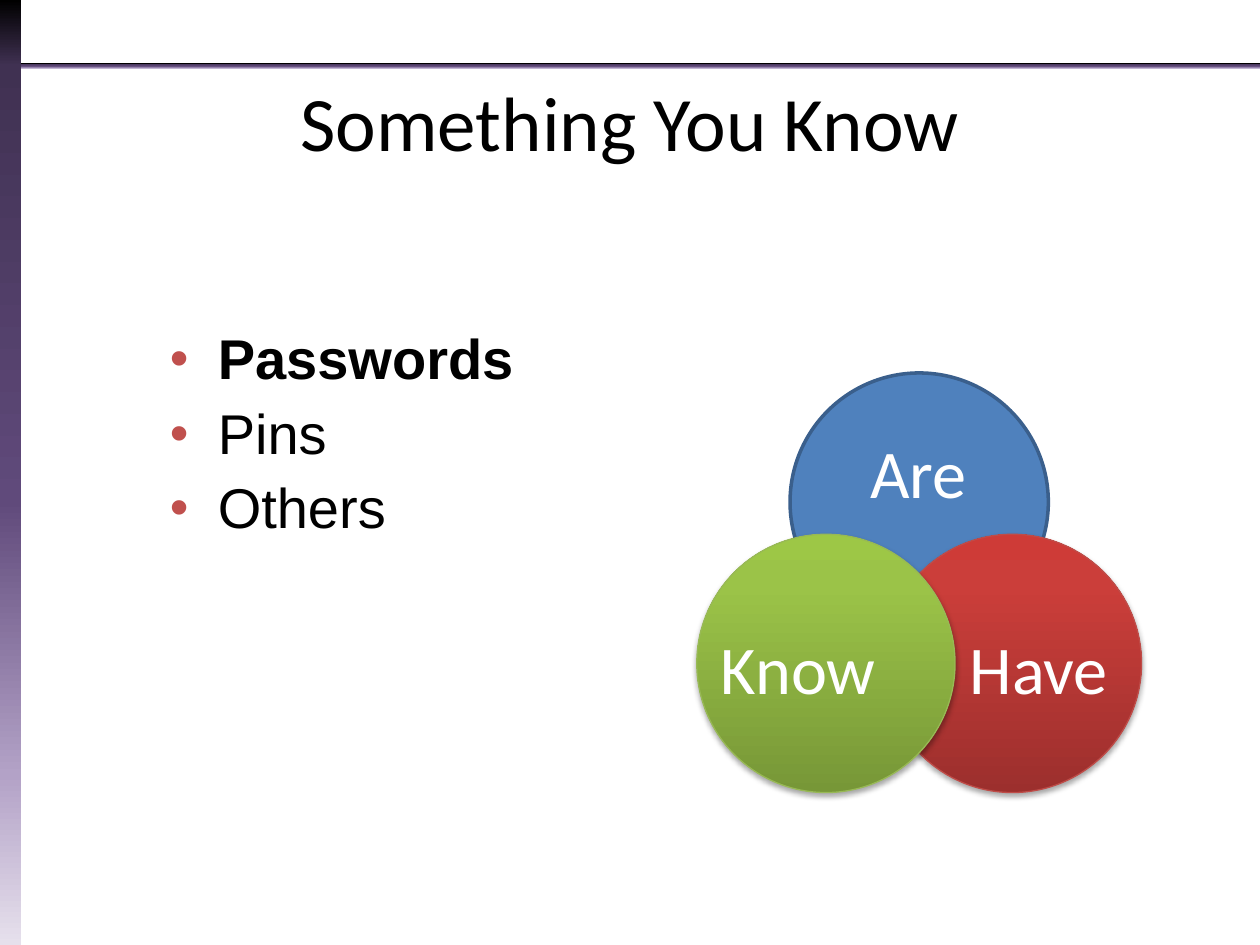
from lxml.etree import SubElement
from pptx import Presentation
from pptx.dml.color import RGBColor
from pptx.enum.shapes import MSO_SHAPE
from pptx.enum.text import MSO_ANCHOR, PP_ALIGN
from pptx.oxml.ns import qn
from pptx.util import Inches, Pt

BLACK = RGBColor(0x00, 0x00, 0x00)
WHITE = RGBColor(0xFF, 0xFF, 0xFF)
BULLET_RED = RGBColor(0xC0, 0x50, 0x4D)
ARE_BLUE = RGBColor(0x4F, 0x81, 0xBD)
ARE_EDGE = RGBColor(0x3A, 0x5F, 0x8C)
HAVE_EDGE = RGBColor(0xBF, 0x4C, 0x48)
KNOW_EDGE = RGBColor(0x98, 0xB9, 0x55)
PURPLE_STOPS = [
    (0, RGBColor(0xE6, 0xE0, 0xEC)),
    (18, RGBColor(0xB3, 0xA2, 0xC7)),
    (47, RGBColor(0x60, 0x4A, 0x7B)),
    (93, RGBColor(0x40, 0x31, 0x52)),
    (100, BLACK),
]
RED_STOPS = [
    (0, RGBColor(0x9C, 0x2F, 0x2D)),
    (80, RGBColor(0xCB, 0x3E, 0x3A)),
    (100, RGBColor(0xCE, 0x3B, 0x37)),
]
GREEN_STOPS = [
    (0, RGBColor(0x77, 0x97, 0x37)),
    (80, RGBColor(0x9B, 0xC3, 0x48)),
    (100, RGBColor(0x9D, 0xC7, 0x46)),
]
DIAMETER = 2.05


def add_element(parent, tag, **attributes):
    """Append a DrawingML element with the given attributes."""
    return SubElement(parent, qn(tag), {k: str(v) for k, v in attributes.items()})


def fill_upward(shape, stops):
    """Fill a shape with a gradient running from bottom to top."""
    shape.fill.gradient()
    shape.fill.gradient_angle = 90
    stop_list = shape.element.spPr.find(".//" + qn("a:gsLst"))
    for default_stop in list(stop_list):
        stop_list.remove(default_stop)
    for percent, color in stops:
        stop = add_element(stop_list, "a:gs", pos=percent * 1000)
        add_element(stop, "a:srgbClr", val=color)


def add_soft_shadow(shape):
    """Put a faint shadow below a shape."""
    effects = shape.element.spPr.find(qn("a:effectLst"))
    shadow = add_element(effects, "a:outerShdw", blurRad=Pt(3.1), dist=Pt(1.8),
                         dir=90 * 60000, rotWithShape=0)
    color = add_element(shadow, "a:srgbClr", val=BLACK)
    add_element(color, "a:alpha", val=35000)


def add_frame(slide, left, top, right, bottom):
    """Draw the purple rule and the purple side band."""
    rule = (left, top + 0.5, right - left, 0.05)
    band = (left, top, 0.25, bottom - top)
    for box in (rule, band):
        bar = slide.shapes.add_shape(MSO_SHAPE.RECTANGLE, *map(Inches, box))
        bar.shadow.inherit = False
        bar.line.fill.background()
        fill_upward(bar, PURPLE_STOPS)


def set_title(slide, text, *box):
    """Place and format the slide title."""
    title = slide.shapes.title
    title.left, title.top, title.width, title.height = map(Inches, box)
    title.text_frame.text = text
    title.text_frame.vertical_anchor = MSO_ANCHOR.MIDDLE
    heading = title.text_frame.paragraphs[0]
    heading.alignment = PP_ALIGN.CENTER
    heading.font.name = "Calibri"
    heading.font.size = Pt(44)
    heading.font.color.rgb = BLACK


def add_examples(slide, examples, *box):
    """List the examples as bullets, with the first one in bold."""
    frame = slide.shapes.add_textbox(*map(Inches, box)).text_frame
    frame.word_wrap = True
    frame.text = "\n".join(examples)
    for index, item in enumerate(frame.paragraphs):
        item.level = 1
        item.line_spacing = 0.9
        if index:
            item.space_before = Pt(8)
        properties = item._p.get_or_add_pPr()
        properties.set("marL", str(Inches(0.88)))
        properties.set("indent", str(Inches(-0.38)))
        bullet_color = add_element(properties, "a:buClr")
        add_element(bullet_color, "a:srgbClr", val=BULLET_RED)
        add_element(properties, "a:buSzPct", val=95000)
        add_element(properties, "a:buFont", typeface="Arial")
        add_element(properties, "a:buChar", char="•")
        item.font.name = "Arial"
        item.font.size = Pt(32)
        item.font.bold = index == 0
        item.font.color.rgb = BLACK


def add_circle(group, left, top, edge, edge_width):
    """Add one outlined circle to the diagram."""
    circle = group.shapes.add_shape(
        MSO_SHAPE.OVAL, *map(Inches, (left, top, DIAMETER, DIAMETER)))
    circle.shadow.inherit = False
    circle.line.color.rgb = edge
    circle.line.width = Pt(edge_width)
    return circle


def add_label(group, text, *box):
    """Add the centred caption of a circle."""
    frame = group.shapes.add_textbox(*map(Inches, box)).text_frame
    frame.word_wrap = True
    frame.margin_left = frame.margin_right = 0
    frame.margin_top = frame.margin_bottom = 0
    frame.vertical_anchor = MSO_ANCHOR.MIDDLE
    frame.text = text
    caption = frame.paragraphs[0]
    caption.alignment = PP_ALIGN.CENTER
    caption.line_spacing = 0.9
    caption.font.name = "Calibri"
    caption.font.size = Pt(39)
    caption.font.color.rgb = WHITE


def add_factor_diagram(slide, left, top):
    """Draw the three overlapping authentication factors."""
    group = slide.shapes.add_group_shape()
    are = add_circle(group, left + 0.74, top, ARE_EDGE, 2)
    are.fill.solid()
    are.fill.fore_color.rgb = ARE_BLUE
    add_label(group, "Are", left + 1.01, top + 0.36, 1.5, 0.92)
    lower_factors = [
        ("Have", 1.48, 2.1, RED_STOPS, HAVE_EDGE),
        ("Know", 0, 0.19, GREEN_STOPS, KNOW_EDGE),
    ]
    for text, circle_x, label_x, stops, edge in lower_factors:
        circle = add_circle(group, left + circle_x, top + 1.28, edge, 0.75)
        fill_upward(circle, stops)
        add_soft_shadow(circle)
        add_label(group, text, left + label_x, top + 1.81, 1.23, 1.13)


def main():
    """Build and save the slide."""
    deck = Presentation()
    deck.slide_width, deck.slide_height = Inches(10), Inches(7.5)
    slide = deck.slides.add_slide(deck.slide_layouts[5])
    add_frame(slide, -0.08, 0, 10, 7.5)
    set_title(slide, "Something You Know", 0.75, 0.33, 8.5, 1.25)
    add_examples(slide, ["Passwords", "Pins", "Others"], 0.75, 2.58, 6.42, 4.08)
    add_factor_diagram(slide, 5.53, 2.96)
    deck.save("out.pptx")


if __name__ == "__main__":
    main()
